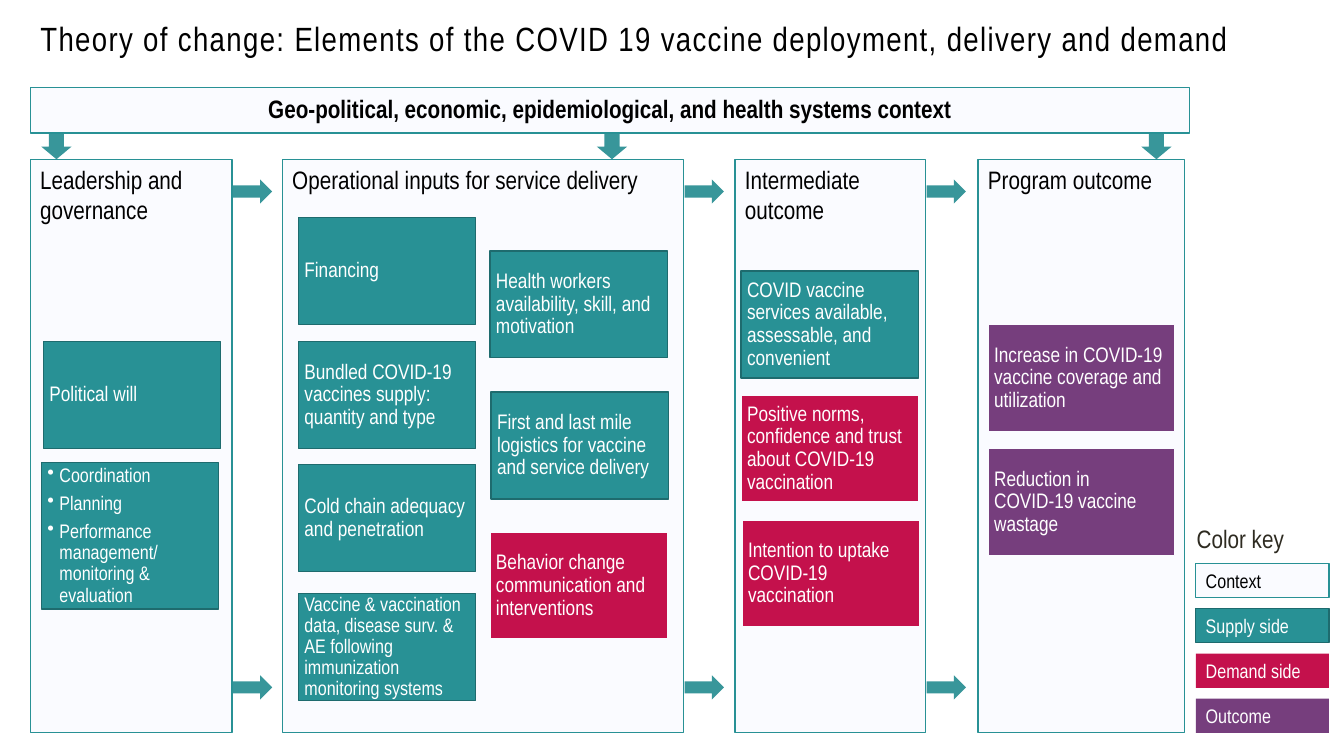
import dataclasses

import lxml.etree
import pptx
import pptx.dml.color
import pptx.enum.shapes
import pptx.enum.text
import pptx.oxml.ns
import pptx.util

Inches = pptx.util.Inches
Pt = pptx.util.Pt
SHAPES = pptx.enum.shapes.MSO_SHAPE
ANCHOR = pptx.enum.text.MSO_ANCHOR
ALIGN = pptx.enum.text.PP_ALIGN


@dataclasses.dataclass(frozen=True)
class Theme:
    font: str = "Arial Narrow"
    black: str = "000000"
    white: str = "FFFFFF"
    key_title: str = "2E2B21"
    arrow: str = "38969A"
    context: tuple = ("FAFBFF", "289195")
    supply: tuple = ("289195", "1E6B6E")
    demand: tuple = ("C4114C", "FAFBFF")
    outcome: tuple = ("763E7D", "FAFBFF")
    title_size: int = 24
    heading_size: int = 18
    card_size: int = 15
    small_size: int = 14


THEME = Theme()
CARD_WIDTH, CARD_HEIGHT = 1.76, 1.06
PANEL_TOP, PANEL_HEIGHT = 1.58, 5.69

PANELS = [
    (0.3, 2, "Leadership and governance", [
        (0.13, 1.81, THEME.supply, "Political will"),
    ]),
    (2.8, 3.98, "Operational inputs for service delivery", [
        (0.16, 0.58, THEME.supply, "Financing"),
        (0.16, 1.81, THEME.supply, "Bundled COVID-19 vaccines supply: quantity and type"),
        (0.16, 3.03, THEME.supply, "Cold chain adequacy and penetration"),
        (2.06, 0.91, THEME.supply, "Health workers availability, skill, and motivation"),
        (2.07, 2.31, THEME.supply, "First and last mile logistics for vaccine and service delivery"),
        (2.06, 3.7, THEME.demand, "Behavior change communication and interventions"),
    ]),
    (7.29, 1.89, "Intermediate outcome", [
        (0.06, 1.11, THEME.supply, "COVID vaccine services available, assessable, and convenient"),
        (0.06, 2.34, THEME.demand, "Positive norms, confidence and trust about COVID-19 vaccination"),
        (0.07, 3.58, THEME.demand, "Intention to uptake COVID-19 vaccination"),
    ]),
    (9.7, 2.05, "Program outcome", [
        (0.1, 1.64, THEME.outcome, "Increase in COVID-19 vaccine coverage and utilization"),
        (0.1, 2.87, THEME.outcome, "Reduction in COVID-19 vaccine wastage"),
    ]),
]


def color(code):
    return pptx.dml.color.RGBColor.from_string(code)


def style_font(para, size, code, bold=False):
    para.font.name = THEME.font
    para.font.size = Pt(size)
    para.font.bold = bold
    para.font.color.rgb = color(code)


def add_bullet(para):
    properties = para._p.get_or_add_pPr()
    properties.set("marL", str(Inches(0.12)))
    properties.set("indent", str(-Inches(0.12)))
    bullet = lxml.etree.SubElement(properties, pptx.oxml.ns.qn("a:buChar"))
    bullet.set("char", "•")


def add_block(page, kind, box, fill, line=None):
    shape = page.shapes.add_shape(kind, *map(Inches, box))
    shape.shadow.inherit = False
    shape.fill.solid()
    shape.fill.fore_color.rgb = color(fill)
    if line:
        shape.line.color.rgb = color(line)
        shape.line.width = Pt(1)
    else:
        shape.line.fill.background()
    return shape


def add_label(page, box, colors, text, size, code, anchor=ANCHOR.TOP):
    shape = add_block(page, SHAPES.RECTANGLE, box, *colors)
    frame = shape.text_frame
    frame.word_wrap = True
    frame.vertical_anchor = anchor
    para = frame.paragraphs[0]
    para.text = text
    para.alignment = ALIGN.LEFT
    style_font(para, size, code)
    return para


def add_card(page, box, colors, lines, size, bulleted=False):
    frame = add_block(page, SHAPES.RECTANGLE, box, *colors).text_frame
    frame.word_wrap = True
    frame.vertical_anchor = ANCHOR.MIDDLE
    frame.margin_left = frame.margin_right = Inches(0.06)
    frame.margin_top = frame.margin_bottom = Inches(0.06)
    for index, line in enumerate(lines):
        para = frame.add_paragraph() if index else frame.paragraphs[0]
        para.text = line
        if bulleted:
            add_bullet(para)
        para.alignment = ALIGN.LEFT
        para.line_spacing = 0.9
        para.space_after = Pt(5)
        style_font(para, size, THEME.white)


def add_title(page, box):
    title = page.shapes.title
    title.left, title.top, title.width, title.height = map(Inches, box)
    frame = title.text_frame
    frame.auto_size = pptx.enum.text.MSO_AUTO_SIZE.NONE
    frame.vertical_anchor = ANCHOR.MIDDLE
    para = frame.paragraphs[0]
    span = para.add_run()
    span.text = "Theory of change: Elements of the COVID 19 vaccine deployment, delivery and demand"
    span.font._element.set("spc", "100")
    para.alignment = ALIGN.LEFT
    para.line_spacing = 0.9
    style_font(para, THEME.title_size, THEME.black)


def add_context(page, box):
    left, top, width, height = box
    para = add_label(page, box, THEME.context,
                     "Geo-political, economic, epidemiological, and health systems context",
                     THEME.heading_size, THEME.black, ANCHOR.MIDDLE)
    para.alignment = ALIGN.CENTER
    para.line_spacing = 0.9
    para.font.bold = True
    for offset in (0.11, 5.62, 11.02):
        add_block(page, SHAPES.DOWN_ARROW, (left + offset, top + height + 0.01, 0.3, 0.25), THEME.arrow)


def add_panel(page, box, heading, cards):
    left, top, width, height = box
    add_label(page, box, THEME.context, heading, THEME.heading_size, THEME.black)
    for across, down, colors, text in cards:
        card_width = 1.85 if colors == THEME.outcome else CARD_WIDTH
        size = THEME.card_size
        add_card(page, (left + across, top + down, card_width, CARD_HEIGHT), colors, [text], size)


def add_small_cards(page):
    add_card(page, (0.41, PANEL_TOP + 3.01, CARD_WIDTH, 1.45), THEME.supply,
             ["Coordination", "Planning", "Performance management/ monitoring & evaluation"],
             THEME.small_size, bulleted=True)
    add_card(page, (2.96, PANEL_TOP + 4.31, CARD_WIDTH, CARD_HEIGHT), THEME.supply,
             ["Vaccine & vaccination data, disease surv. & AE following immunization monitoring systems"],
             THEME.small_size)


def add_flow_arrows(page, left, top):
    for down in (0.2, 5.12):
        add_block(page, SHAPES.RIGHT_ARROW, (left, top + down, 0.39, 0.24), THEME.arrow)


def add_color_key(page, left, top):
    heading = page.shapes.add_textbox(*map(Inches, (left, top, 1.08, 0.4)))
    heading.text_frame.word_wrap = False
    para = heading.text_frame.paragraphs[0]
    para.text = "Color key"
    style_font(para, THEME.heading_size, THEME.key_title)
    entries = [
        ("Context", THEME.context, THEME.black),
        ("Supply side", THEME.supply, THEME.white),
        ("Demand side", THEME.demand[:1], THEME.white),
        ("Outcome", THEME.outcome[:1], THEME.white),
    ]
    for index, (name, colors, code) in enumerate(entries):
        box = (left + 0.09, top + 0.45 + 0.447 * index, 1.32, 0.34)
        add_label(page, box, colors, name, THEME.small_size, code)


def main():
    deck = pptx.Presentation()
    deck.slide_width, deck.slide_height = Inches(13.33), Inches(7.5)
    page = deck.slides.add_slide(deck.slide_layouts[5])
    add_title(page, (0.3, 0.04, 12.4, 0.73))
    for left, width, heading, cards in PANELS:
        add_panel(page, (left, PANEL_TOP, width, PANEL_HEIGHT), heading, cards)
    add_small_cards(page)
    for left, width, heading, cards in PANELS[:-1]:
        add_flow_arrows(page, left + width + 0.01, PANEL_TOP)
    add_context(page, (0.3, 0.87, 11.5, 0.45))
    add_color_key(page, 11.77, 5.14)
    deck.save("out.pptx")


if __name__ == "__main__":
    main()
